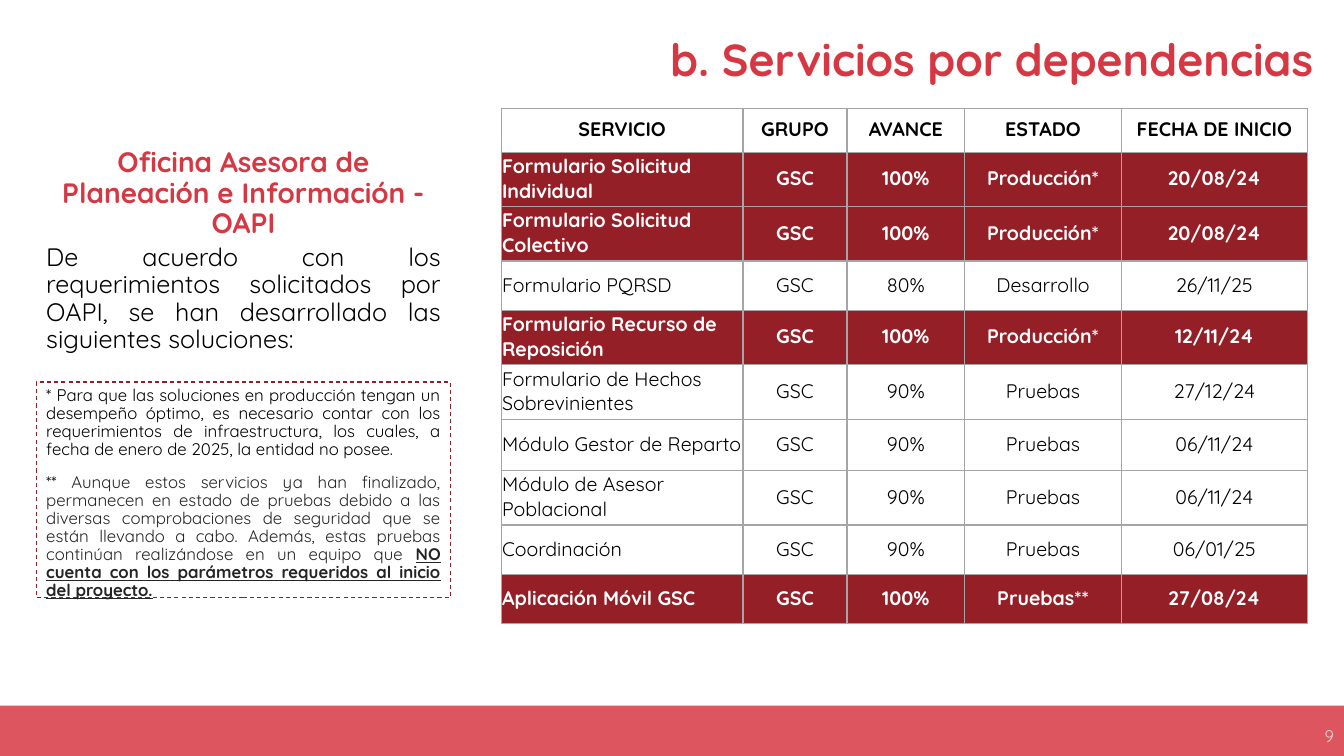
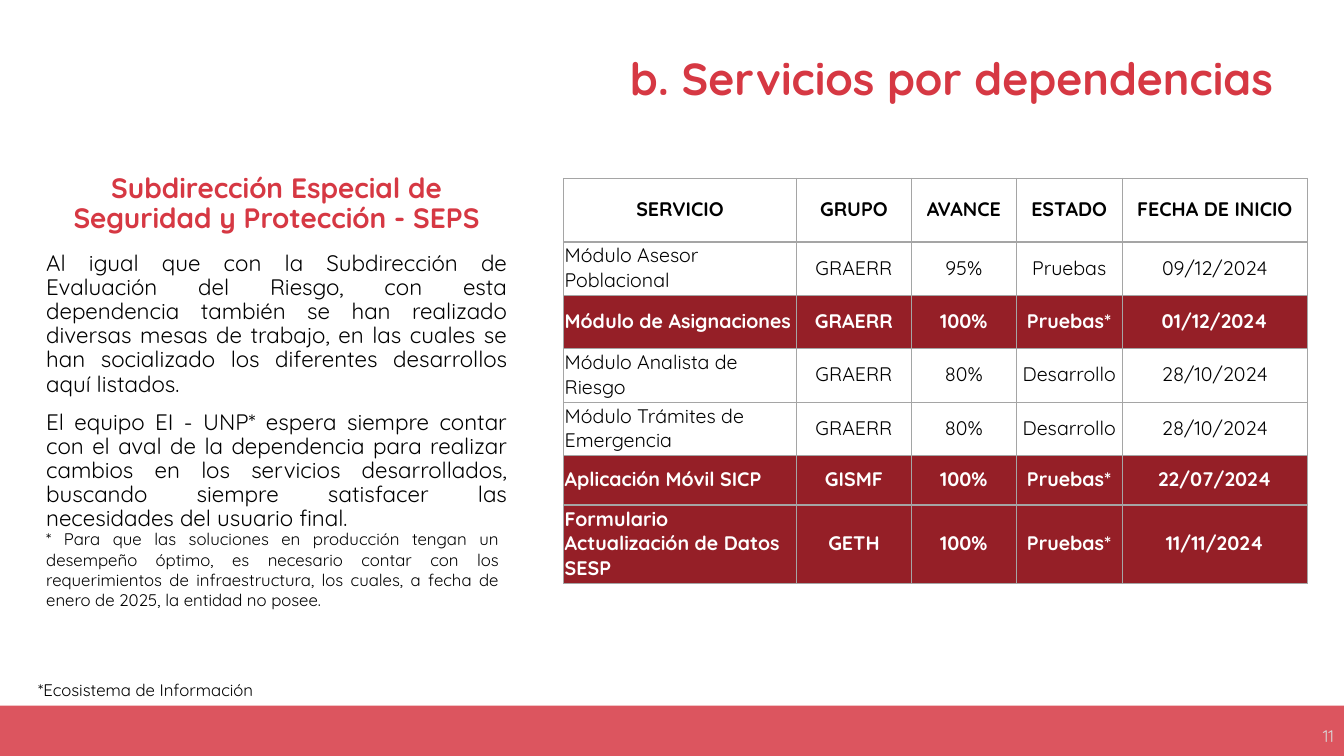
from dataclasses import dataclass
from typing import NamedTuple

from lxml import etree
from pptx import Presentation
from pptx.dml.color import RGBColor
from pptx.enum.dml import MSO_LINE
from pptx.enum.shapes import MSO_SHAPE
from pptx.enum.text import MSO_ANCHOR as ANCHOR, MSO_AUTO_SIZE as AUTO, PP_ALIGN as ALIGN
from pptx.oxml.ns import qn
from pptx.util import Inches, Pt

FONT = "Quicksand"
RED, WINE, GREY, PALE = "D63843", "951F27", "A5A5A5", "D9D9D9"
BLACK, INK, WHITE = "000000", "242424", "FFFFFF"
HEADING = "b. Servicios por dependencias"
HEADERS = ("SERVICIO", "GRUPO", "AVANCE", "ESTADO", "FECHA DE INICIO")
PRODUCTION_NOTE = (
    "* Para que las soluciones en producción tengan un desempeño óptimo, es necesario "
    "contar con los requerimientos de infraestructura, los cuales, a fecha de enero de "
    "2025, la entidad no posee."
)


class Box(NamedTuple):
    left: float
    top: float
    width: float
    height: float

    def lengths(self):
        return [Inches(v) for v in self]


class Run(NamedTuple):
    text: str
    color: str = BLACK
    strong: bool = False


@dataclass(frozen=True)
class Style:
    size: float
    color: str = BLACK
    bold: bool = False
    align: ALIGN = ALIGN.LEFT
    spacing: float = 1.0
    before: float = 0


@dataclass(frozen=True)
class TextItem:
    box: Box
    paragraphs: tuple
    style: Style
    dashed: bool = False
    anchor: ANCHOR = ANCHOR.TOP


@dataclass(frozen=True)
class ServiceTable:
    left: float
    top: float
    columns: tuple[float, ...]
    heights: tuple[float, ...]
    rows: tuple[tuple[str, ...], ...]


@dataclass(frozen=True)
class ServiceSlide:
    number: str
    heading_box: Box
    office: str
    office_box: Box
    texts: tuple[TextItem, ...]
    table: ServiceTable


HEADING_STYLE = Style(32, RED, True, ALIGN.RIGHT, 0.9)
OFFICE_STYLE = Style(20, RED, True, ALIGN.CENTER, 0.9)
NUMBER_STYLE = Style(12, PALE, align=ALIGN.RIGHT)

SLIDES = (
    ServiceSlide(
        "9",
        Box(1.93, 0.19, 11.2, 0.71),
        "Oficina Asesora de Planeación e Información - OAPI",
        Box(0.36, 1.57, 4.11, 0.71),
        (
            TextItem(
                Box(0.36, 2.38, 4.11, 1.23),
                ("De acuerdo con los requerimientos solicitados por OAPI, se han "
                 "desarrollado las siguientes soluciones:",),
                Style(18, align=ALIGN.JUSTIFY, spacing=0.9),
            ),
            TextItem(
                Box(0.36, 3.79, 4.11, 2.14),
                (
                    PRODUCTION_NOTE,
                    (
                        Run("** "),
                        Run("Aunque estos servicios ya han finalizado, permanecen en estado "
                            "de pruebas debido a las diversas comprobaciones de seguridad que "
                            "se están llevando a cabo. Además, estas pruebas continúan "
                            "realizándose en un equipo que ", INK),
                        Run("NO cuenta con los parámetros requeridos al inicio del proyecto.",
                            INK, True),
                    ),
                ),
                Style(12, align=ALIGN.JUSTIFY, spacing=0.9, before=10),
                dashed=True,
            ),
        ),
        ServiceTable(
            4.97, 1.08,
            (2.4, 1.03, 1.17, 1.55, 1.85),
            (0.43, 0.54, 0.54, 0.49, 0.54, 0.54, 0.51, 0.54, 0.49, 0.49),
            (
                ("Formulario Solicitud Individual", "GSC", "100%", "Producción*", "20/08/24"),
                ("Formulario Solicitud Colectivo", "GSC", "100%", "Producción*", "20/08/24"),
                ("Formulario PQRSD", "GSC", "80%", "Desarrollo", "26/11/25"),
                ("Formulario Recurso de Reposición", "GSC", "100%", "Producción*", "12/11/24"),
                ("Formulario de Hechos Sobrevinientes", "GSC", "90%", "Pruebas", "27/12/24"),
                ("Módulo Gestor de Reparto", "GSC", "90%", "Pruebas", "06/11/24"),
                ("Módulo de Asesor Poblacional", "GSC", "90%", "Pruebas", "06/11/24"),
                ("Coordinación", "GSC", "90%", "Pruebas", "06/01/25"),
                ("Aplicación Móvil GSC", "GSC", "100%", "Pruebas**", "27/08/24"),
            ),
        ),
    ),
    ServiceSlide(
        "11",
        Box(1.53, 0.38, 11.2, 0.71),
        "Subdirección Especial de Seguridad y Protección - SEPS",
        Box(0.36, 1.67, 4.77, 0.71),
        (
            TextItem(
                Box(0.36, 2.45, 4.77, 2.67),
                (
                    "Al igual que con la Subdirección de Evaluación del Riesgo, con esta "
                    "dependencia también se han realizado diversas mesas de trabajo, en las "
                    "cuales se han socializado los diferentes desarrollos aquí listados.",
                    "El equipo EI - UNP* espera siempre contar con el aval de la dependencia "
                    "para realizar cambios en los servicios desarrollados, buscando siempre "
                    "satisfacer las necesidades del usuario final.",
                ),
                Style(16, align=ALIGN.JUSTIFY, spacing=0.9, before=10),
            ),
            TextItem(Box(0.28, 6.69, 2.8, 0.3), ("*Ecosistema de Información",), Style(12)),
            TextItem(Box(0.36, 5.2, 4.69, 0.91), (PRODUCTION_NOTE,),
                     Style(12, align=ALIGN.JUSTIFY)),
        ),
        ServiceTable(
            5.59, 1.77,
            (2.31, 1.14, 1.04, 1.05, 1.84),
            (0.63, 0.53, 0.53, 0.53, 0.53, 0.49, 0.78),
            (
                ("Módulo Asesor Poblacional", "GRAERR", "95%", "Pruebas", "09/12/2024"),
                ("Módulo de Asignaciones", "GRAERR", "100%", "Pruebas*", "01/12/2024"),
                ("Módulo Analista de Riesgo", "GRAERR", "80%", "Desarrollo", "28/10/2024"),
                ("Módulo Trámites de Emergencia", "GRAERR", "80%", "Desarrollo", "28/10/2024"),
                ("Aplicación Móvil SICP", "GISMF", "100%", "Pruebas*", "22/07/2024"),
                ("Formulario Actualización de Datos SESP", "GETH", "100%", "Pruebas*",
                 "11/11/2024"),
            ),
        ),
    ),
)


def rgb(color: str) -> RGBColor:
    return RGBColor.from_string(color)


def style_paragraph(p, style: Style, first: bool = True) -> None:
    p.alignment = style.align
    p.line_spacing = style.spacing
    p.space_before = Pt(0 if first else style.before)
    p.font.name = FONT
    p.font.size = Pt(style.size)
    p.font.bold = style.bold
    p.font.color.rgb = rgb(style.color)


def write_text(tf, paragraphs: tuple, style: Style, anchor: ANCHOR) -> None:
    """Fill a frame; each paragraph is a string or a tuple of runs."""
    tf.word_wrap = True
    tf.auto_size = AUTO.NONE
    tf.vertical_anchor = anchor
    for i, content in enumerate(paragraphs):
        p = tf.paragraphs[0] if i == 0 else tf.add_paragraph()
        style_paragraph(p, style, i == 0)
        if isinstance(content, str):
            p.add_run().text = content
            continue
        for part in content:
            r = p.add_run()
            r.text = part.text
            r.font.color.rgb = rgb(part.color)
            if part.strong:
                r.font.bold = r.font.underline = True


def add_text(s, item: TextItem) -> None:
    if item.dashed:
        sp = s.shapes.add_shape(MSO_SHAPE.RECTANGLE, *item.box.lengths())
        sp.shadow.inherit = False
        sp.fill.background()
        sp.line.color.rgb = rgb(WINE)
        sp.line.width = Pt(0.75)
        sp.line.dash_style = MSO_LINE.DASH
    else:
        sp = s.shapes.add_textbox(*item.box.lengths())
    write_text(sp.text_frame, item.paragraphs, item.style, item.anchor)


def add_band(s) -> None:
    sp = s.shapes.add_shape(MSO_SHAPE.RECTANGLE, *Box(0, 7, 13.33, 0.5).lengths())
    sp.shadow.inherit = False
    sp.fill.solid()
    sp.fill.fore_color.rgb = rgb(RED)
    sp.line.fill.background()
    color = next(sp.fill._xPr.iter(qn("a:srgbClr")))
    etree.SubElement(color, qn("a:alpha"), val="85000")


def add_borders(cell) -> None:
    tc_pr = cell._tc.get_or_add_tcPr()
    for side in ("a:lnL", "a:lnR", "a:lnT", "a:lnB"):
        ln = etree.SubElement(tc_pr, qn(side), w=str(Pt(1)))
        fill = etree.SubElement(ln, qn("a:solidFill"))
        etree.SubElement(fill, qn("a:srgbClr"), val=GREY)


def fill_cell(cell, text: str, style: Style, fill: str | None) -> None:
    cell.margin_left = cell.margin_top = cell.margin_right = Inches(0.01)
    cell.margin_bottom = Inches(0.03)
    cell.vertical_anchor = ANCHOR.MIDDLE
    add_borders(cell)
    if fill:
        cell.fill.solid()
        cell.fill.fore_color.rgb = rgb(fill)
    else:
        cell.fill.background()
    p = cell.text_frame.paragraphs[0]
    style_paragraph(p, style)
    p.add_run().text = text


def add_service_table(s, services: ServiceTable) -> None:
    """Draw the services, marking in wine those that are fully done."""
    box = Box(services.left, services.top, sum(services.columns), sum(services.heights))
    rows = (HEADERS, *services.rows)
    table = s.shapes.add_table(len(rows), len(HEADERS), *box.lengths()).table
    table.first_row = table.horz_banding = False
    for column, width in zip(table.columns, services.columns):
        column.width = Inches(width)
    for row, height in zip(table.rows, services.heights):
        row.height = Inches(height)
    for i, values in enumerate(rows):
        header, done = i == 0, values[2] == "100%"
        for j, text in enumerate(values):
            align = ALIGN.LEFT if j == 0 and not header else ALIGN.CENTER
            style = Style(14, WHITE if done else BLACK, header or done, align)
            fill_cell(table.cell(i, j), text, style, WINE if done else None)


def add_service_slide(prs, content: ServiceSlide) -> None:
    s = prs.slides.add_slide(prs.slide_layouts[5])
    add_band(s)
    title = s.shapes.title
    title.left, title.top, title.width, title.height = content.office_box.lengths()
    write_text(title.text_frame, (content.office,), OFFICE_STYLE, ANCHOR.MIDDLE)
    add_text(s, TextItem(content.heading_box, (HEADING,), HEADING_STYLE, anchor=ANCHOR.BOTTOM))
    add_text(s, TextItem(Box(10.33, 7.1, 3, 0.4), (content.number,), NUMBER_STYLE,
                         anchor=ANCHOR.MIDDLE))
    for item in content.texts:
        add_text(s, item)
    add_service_table(s, content.table)


def main() -> None:
    prs = Presentation()
    prs.slide_width, prs.slide_height = Inches(13.33), Inches(7.5)
    for content in SLIDES:
        add_service_slide(prs, content)
    prs.save("out.pptx")


if __name__ == "__main__":
    main()
